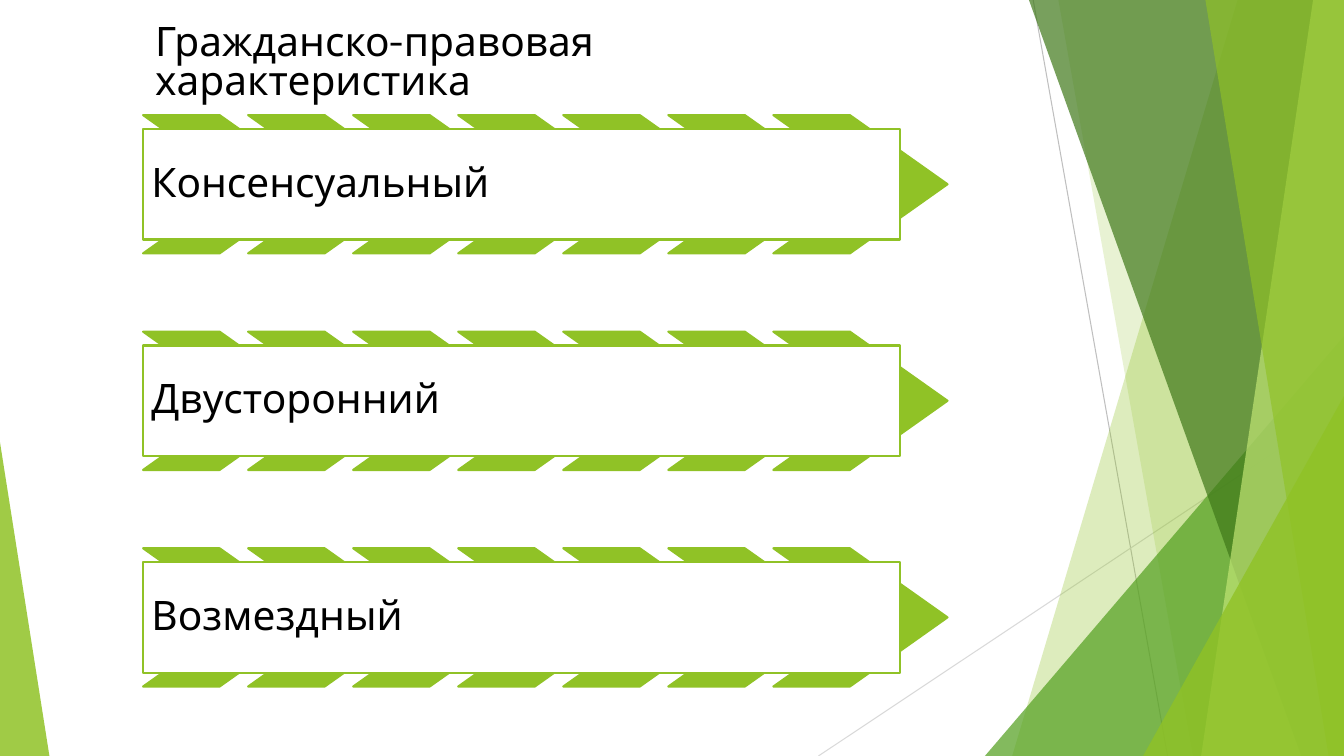
from dataclasses import dataclass
from lxml import etree
from pptx import Presentation
from pptx.dml.color import RGBColor
from pptx.enum.shapes import MSO_CONNECTOR, MSO_SHAPE
from pptx.enum.text import MSO_ANCHOR, MSO_AUTO_SIZE, PP_ALIGN
from pptx.oxml.ns import qn
from pptx.util import Pt

LINE = MSO_CONNECTOR.STRAIGHT
TRIANGLE, CHEVRON, RECT = (MSO_SHAPE.ISOSCELES_TRIANGLE, MSO_SHAPE.CHEVRON,
                           MSO_SHAPE.RECTANGLE)
MIDDLE, BOTTOM = MSO_ANCHOR.MIDDLE, MSO_ANCHOR.BOTTOM
LEFT = PP_ALIGN.LEFT
NO_FIT = MSO_AUTO_SIZE.NONE


@dataclass(frozen=True)
class Theme:
    font: str = "Karla"
    size: float = 29
    outline: float = 1.5
    hairline: float = 0.75
    text: str = "000000"
    paper: str = "FFFFFF"
    lime: str = "90C226"
    pale: str = "C0E474"
    green: str = "54A021"
    forest: str = "3F7819"
    gray: str = "BFBFBF"
    silver: str = "D9D9D9"


THEME = Theme()
WIDTH, HEIGHT = 960, 540


def rgb(color):
    return RGBColor.from_string(color)


def assign(target, values):
    for name, value in values.items():
        setattr(target, name, value)


def paint(sp, color, alpha=None, line=None):
    sp.shadow.inherit = False
    sp.fill.solid()
    sp.fill.fore_color.rgb = rgb(color)
    if alpha:
        clr = sp.fill._xPr.find(qn("a:solidFill"))[0]
        etree.SubElement(clr, qn("a:alpha"), val=str(alpha * 1000))
    if line:
        sp.line.color.rgb = rgb(line)
        sp.line.width = Pt(THEME.outline)
    else:
        sp.line.fill.background()


def add_shape(s, kind, box, adj=None):
    sp = s.shapes.add_shape(kind, *map(Pt, box))
    if adj is not None:
        sp.adjustments[0] = adj
    return sp


def add_hairline(s, start, end, color):
    cn = s.shapes.add_connector(LINE, *map(Pt, start + end))
    cn.line.color.rgb = rgb(color)
    cn.line.width = Pt(THEME.hairline)
    etree.SubElement(cn._element.spPr, qn("a:effectLst"))


def add_band(s, top, bottom, color, alpha):
    points = [(top, 0), (WIDTH, 0), (WIDTH, HEIGHT), (bottom, HEIGHT)]
    fb = s.shapes.build_freeform(*map(Pt, points[0]))
    fb.add_line_segments([tuple(map(Pt, p)) for p in points[1:]], close=True)
    paint(fb.convert_to_shape(), color, alpha)


def add_corner(s, left, top, width, peak, color, alpha):
    sp = add_shape(s, TRIANGLE, (left, top, width, HEIGHT - top), peak)
    paint(sp, color, alpha)


def add_backdrop(s):
    t = THEME
    add_hairline(s, (738, 0), (834, HEIGHT), t.gray)
    add_hairline(s, (WIDTH, 290), (584.6, HEIGHT), t.silver)
    add_band(s, 884, 723, t.lime, 30)
    add_band(s, 756, 852, t.lime, 20)
    add_corner(s, 703.5, 240, WIDTH - 703.5, 1, t.green, 72)
    add_band(s, 735, 929.5, t.forest, 70)
    add_band(s, 938, 858, t.pale, 70)
    add_band(s, 861, 949, t.lime, 65)
    add_corner(s, 816.5, 283, WIDTH - 816.5, 1, t.lime, 80)
    add_corner(s, 0, 316, 35.3, 0, t.lime, 85)


def set_text(sp, text, anchor, inset, spacing):
    tf = sp.text_frame
    margins = dict.fromkeys(
        ("margin_left", "margin_top", "margin_right", "margin_bottom"), Pt(inset))
    assign(tf, dict(margins, word_wrap=True, auto_size=NO_FIT, vertical_anchor=anchor))
    p = tf.paragraphs[0]
    assign(p, dict(alignment=LEFT, line_spacing=spacing))
    r = p.add_run()
    r.text = text
    assign(r.font, dict(name=THEME.font, size=Pt(THEME.size)))
    r.font.color.rgb = rgb(THEME.text)


def add_title(s, text, box):
    sp = s.shapes.title
    assign(sp, dict(zip(("left", "top", "width", "height"), map(Pt, box))))
    set_text(sp, text, BOTTOM, 8.6, 0.8)


def add_arrow_row(s, text, box, count=7):
    left, top, width, height = box
    chevron_width, step = 124.4, 75.03
    for i in range(count):
        place = (left + i * step, top, chevron_width, height)
        paint(add_shape(s, CHEVRON, place, 0.706), THEME.lime, line=THEME.lime)
    label = add_shape(s, RECT, (left, top + height * 0.1, width, height * 0.8))
    paint(label, THEME.paper, line=THEME.lime)
    set_text(label, text, MIDDLE, 6, 0.9)


def add_arrow_list(s, items, box, pitch):
    left, top, width, height = box
    for i, text in enumerate(items):
        add_arrow_row(s, text, (left, top + i * pitch, width, height))


def main():
    prs = Presentation()
    prs.slide_width, prs.slide_height = Pt(WIDTH), Pt(HEIGHT)
    s = prs.slides.add_slide(prs.slide_layouts[5])
    add_backdrop(s)
    add_title(s, "Гражданско-правовая характеристика", (102.2, 33.8, 533.5, 48.5))
    add_arrow_list(s, ("Консенсуальный", "Двусторонний", "Возмездный"),
                   (102.2, 82.2, 540.5, 98.8), 154.7)
    prs.save("out.pptx")


if __name__ == "__main__":
    main()
